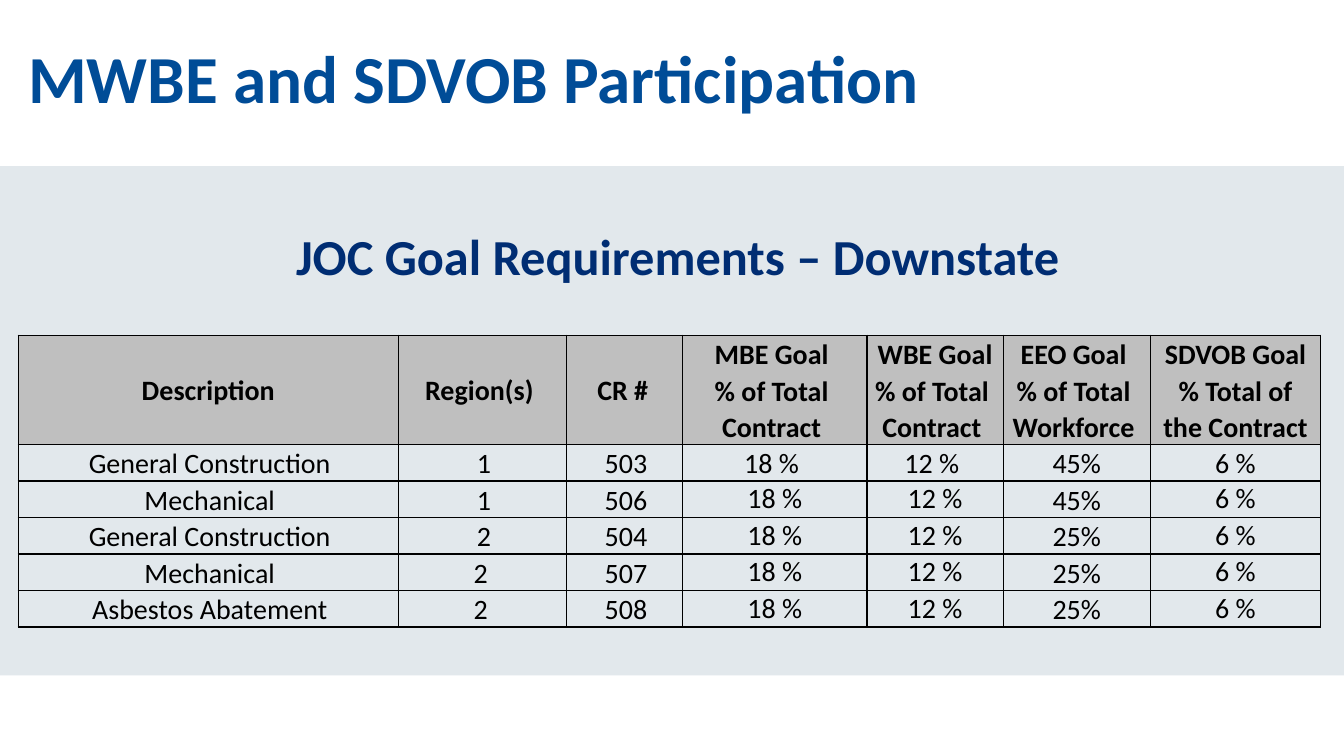
from lxml import etree
from pptx import Presentation
from pptx.dml.color import RGBColor
from pptx.enum.shapes import MSO_SHAPE
from pptx.enum.text import MSO_ANCHOR, PP_ALIGN
from pptx.oxml.ns import qn
from pptx.util import Cm, Pt

RECT = MSO_SHAPE.RECTANGLE
TOP, MIDDLE = MSO_ANCHOR.TOP, MSO_ANCHOR.MIDDLE
LEFT, CENTER = PP_ALIGN.LEFT, PP_ALIGN.CENTER

TITLE = "MWBE and SDVOB Participation"
SUBTITLE = "JOC Goal Requirements – Downstate"
HEADER = [
    [" Description "],
    ["Region(s) "],
    ["CR # "],
    ["MBE Goal ", "% of Total ", "Contract "],
    ["WBE Goal ", "% of Total ", "Contract "],
    ["EEO Goal ", "% of Total ", "Workforce "],
    ["SDVOB Goal", "% Total of the Contract"],
]
ROWS = [
    ("General Construction", "1", "503", "18 % ", "12 % ", "45%", "6 %"),
    ("Mechanical", "1", "506", "18 %", "12 %", "45%", "6 %"),
    ("General Construction", "2", "504", "18 %", "12 %", "25%", "6 %"),
    ("Mechanical", "2 ", "507", "18 %", "12 %", "25%", "6 %"),
    ("Asbestos Abatement", "2 ", "508", "18 %", "12 %", "25%", "6 %"),
]
COL_WIDTHS = [9.58, 4.24, 2.92, 4.65, 3.43, 3.71, 4.29]
HEADER_HEIGHT, ROW_HEIGHT = 2.75, 0.92
WIDE_MARGINS, SHIFTED_MARGINS = (0.2, 0.2), (0.25, 0.18)
TIGHT_COLS = (3, 4, 6)


def rgb(color):
    return RGBColor.from_string(color)


def write(tf, lines, size=20, color="000000", bold=False, align=CENTER, spacing=1.0):
    tf.word_wrap = True
    for i, line in enumerate(lines):
        p = tf.paragraphs[0] if i == 0 else tf.add_paragraph()
        p.alignment, p.line_spacing = align, spacing
        r = p.add_run()
        r.text = line
        r.font.name, r.font.size, r.font.bold = "Calibri", Pt(size), bold
        r.font.color.rgb = rgb(color)


def add_text(s, box, text, anchor=TOP, **fmt):
    tf = s.shapes.add_textbox(*map(Cm, box)).text_frame
    tf.vertical_anchor = anchor
    write(tf, [text], **fmt)


def add_borders(cell, color="000000", width=1):
    tcPr = cell._tc.get_or_add_tcPr()
    for side in ("a:lnL", "a:lnR", "a:lnT", "a:lnB"):
        ln = etree.SubElement(tcPr, qn(side), w=str(Pt(width)))
        fill = etree.SubElement(ln, qn("a:solidFill"))
        etree.SubElement(fill, qn("a:srgbClr"), val=color)


def fill_cell(cell, lines, row, col):
    head = row == 0
    shifted = col == 2 if head else col < 3
    left, right = SHIFTED_MARGINS if shifted else WIDE_MARGINS
    cell.margin_left, cell.margin_right = Cm(left), Cm(right)
    cell.margin_top = cell.margin_bottom = 0
    cell.vertical_anchor = MIDDLE if head and col < 3 else TOP
    add_borders(cell)
    if head:
        cell.fill.solid()
        cell.fill.fore_color.rgb = rgb("BFBFBF")
    else:
        cell.fill.background()
    tight = row > 1 and col in TIGHT_COLS
    write(cell.text_frame, lines, bold=head, spacing=1.03 if tight else 1.07)


def add_goal_table(s, left, top):
    rows = [HEADER] + [[[text] for text in row] for row in ROWS]
    heights = [HEADER_HEIGHT] + [ROW_HEIGHT] * len(ROWS)
    table = s.shapes.add_table(len(rows), len(COL_WIDTHS), Cm(left), Cm(top),
                               Cm(sum(COL_WIDTHS)), Cm(sum(heights))).table
    table.first_row = table.horz_banding = False
    for column, width in zip(table.columns, COL_WIDTHS):
        column.width = Cm(width)
    for i, row in enumerate(rows):
        table.rows[i].height = Cm(heights[i])
        for j, lines in enumerate(row):
            fill_cell(table.cell(i, j), lines, i, j)


def add_band(s, box, color, opacity):
    band = s.shapes.add_shape(RECT, *map(Cm, box))
    band.shadow.inherit = False
    band.line.fill.background()
    band.fill.solid()
    band.fill.fore_color.rgb = rgb(color)
    clr = band._element.spPr.find(qn("a:solidFill")).find(qn("a:srgbClr"))
    etree.SubElement(clr, qn("a:alpha"), val=str(opacity * 1000))


def main():
    prs = Presentation()
    prs.slide_width, prs.slide_height = Cm(33.87), Cm(19.05)
    s = prs.slides.add_slide(prs.slide_layouts[6])
    add_band(s, (0, 4.19, 33.87, 12.83), "BFCED6", 45)
    add_text(s, (0.46, 0.48, 33.07, 3.18), TITLE, anchor=MIDDLE, size=48,
             color="004C97", bold=True, align=LEFT, spacing=0.9)
    add_text(s, (5.97, 5.54, 22.23, 1.8), SUBTITLE, size=36, color="002D73", bold=True)
    add_goal_table(s, 0.46, 8.45)
    prs.save("out.pptx")


if __name__ == "__main__":
    main()
